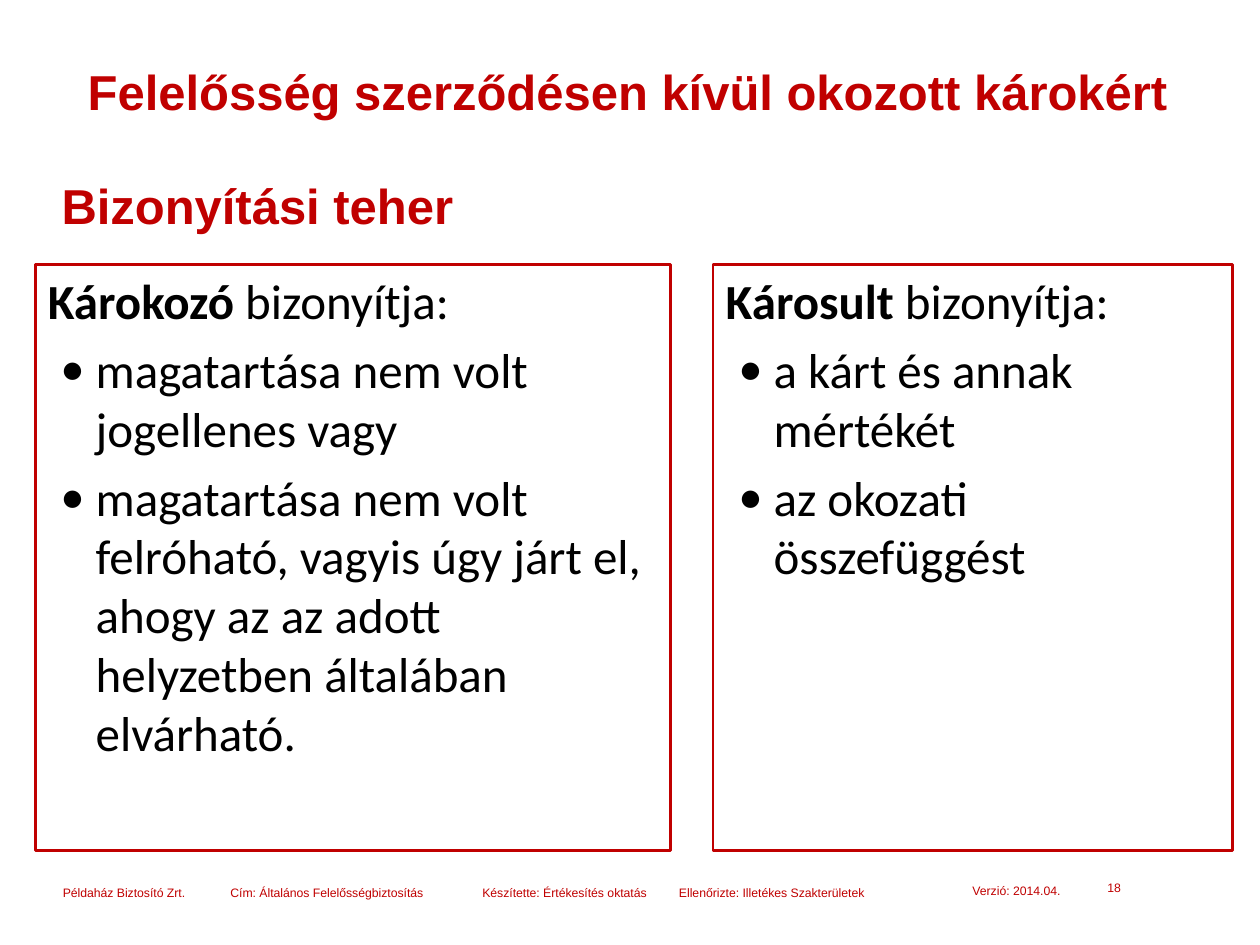
"""Build the slide on the burden of proof in tort liability."""
from dataclasses import dataclass

from lxml.etree import SubElement
from pptx import Presentation
from pptx.dml.color import RGBColor
from pptx.enum.text import MSO_ANCHOR, MSO_AUTO_SIZE, PP_ALIGN
from pptx.oxml.ns import qn
from pptx.util import Inches, Pt

COLORS = {"red": "C00000", "black": "000000"}


@dataclass
class Label:
    text: str
    left: float
    top: float
    width: float
    height: float
    size: float = 7
    bold: bool = False


@dataclass
class Panel:
    left: float
    width: float
    party: str
    proofs: list[str]


LABELS = [
    Label("Bizonyítási teher", 0.39, 1.34, 4.49, 0.57, 28, True),
    Label("Példaház Biztosító Zrt.", 0.4, 6.98, 1.26, 0.22),
    Label("Cím: Általános Felelősségbiztosítás", 1.73, 6.98, 1.85, 0.22),
    Label("Készítette: Értékesítés oktatás", 3.73, 6.98, 1.64, 0.22),
    Label("Ellenőrizte: Illetékes Szakterületek", 5.29, 6.98, 2.08, 0.22),
    Label("Verzió: 2014.04.", 7.62, 6.96, 1.16, 0.22),
    Label("18", 8.69, 6.94, 0.31, 0.23),
]
PANELS = [
    Panel(0.28, 5.04, "Károkozó", [
        "magatartása nem volt jogellenes vagy",
        "magatartása nem volt felróható, vagyis úgy járt el, "
        "ahogy az az adott helyzetben általában elvárható.",
    ]),
    Panel(5.66, 4.12, "Károsult", [
        "a kárt és annak mértékét",
        "az okozati összefüggést",
    ]),
]


def place(shape, left: float, top: float, width: float, height: float) -> None:
    """Move and size a shape, in inches."""
    shape.left, shape.top = Inches(left), Inches(top)
    shape.width, shape.height = Inches(width), Inches(height)


def add_run(para, text: str, size: float, color: str, font: str, bold: bool = False) -> None:
    """Add one formatted run."""
    run = para.add_run()
    run.text = text
    run.font.name, run.font.size, run.font.bold = font, Pt(size), bold
    run.font.color.rgb = RGBColor.from_string(COLORS[color])


def set_mark(para, mark: str = "") -> None:
    """Give a paragraph a hanging bullet, or none."""
    props = para._p.get_or_add_pPr()
    props.set("marL", str(Inches(0.38) if mark else 0))
    props.set("indent", str(Inches(-0.28) if mark else 0))
    if mark:
        SubElement(props, qn("a:buFont"), typeface="Calibri")
        SubElement(props, qn("a:buChar"), char=mark)
    else:
        SubElement(props, qn("a:buNone"))
    para.space_before = Pt(5.6 if mark else 0)


def draw_label(slide, label: Label) -> None:
    """Draw a red line of text."""
    box = slide.shapes.add_textbox(0, 0, 0, 0)
    place(box, label.left, label.top, label.width, label.height)
    box.text_frame.word_wrap = True
    add_run(box.text_frame.paragraphs[0], label.text, label.size, "red", "Arial", label.bold)


def draw_panel(shape, panel: Panel) -> None:
    """Fill a body placeholder with what one party must prove."""
    place(shape, panel.left, 2.1, panel.width, 4.65)
    shape.line.color.rgb = RGBColor.from_string(COLORS["red"])
    shape.line.width = Pt(1.5)
    frame = shape.text_frame
    frame.auto_size = MSO_AUTO_SIZE.NONE
    head = frame.paragraphs[0]
    set_mark(head)
    add_run(head, panel.party, 28, "black", "Calibri", True)
    add_run(head, " bizonyítja:", 28, "black", "Calibri")
    for proof in panel.proofs:
        para = frame.add_paragraph()
        set_mark(para, "•")
        add_run(para, proof, 28, "black", "Calibri")


def draw_title(shape, text: str) -> None:
    """Set the slide title."""
    place(shape, 0.49, 0.44, 8.98, 0.57)
    frame = shape.text_frame
    frame.auto_size = MSO_AUTO_SIZE.NONE
    frame.vertical_anchor = MSO_ANCHOR.MIDDLE
    para = frame.paragraphs[0]
    para.alignment = PP_ALIGN.CENTER
    add_run(para, text, 28, "red", "Arial", True)


def main() -> None:
    """Build and save the slide."""
    deck = Presentation()
    deck.slide_width, deck.slide_height = Inches(10), Inches(7.5)
    slide = deck.slides.add_slide(deck.slide_layouts[3])
    title, *bodies = slide.placeholders
    draw_title(title, "Felelősség szerződésen kívül okozott károkért")
    for body, panel in zip(bodies, PANELS):
        draw_panel(body, panel)
    for label in LABELS:
        draw_label(slide, label)
    deck.save("out.pptx")


if __name__ == "__main__":
    main()
